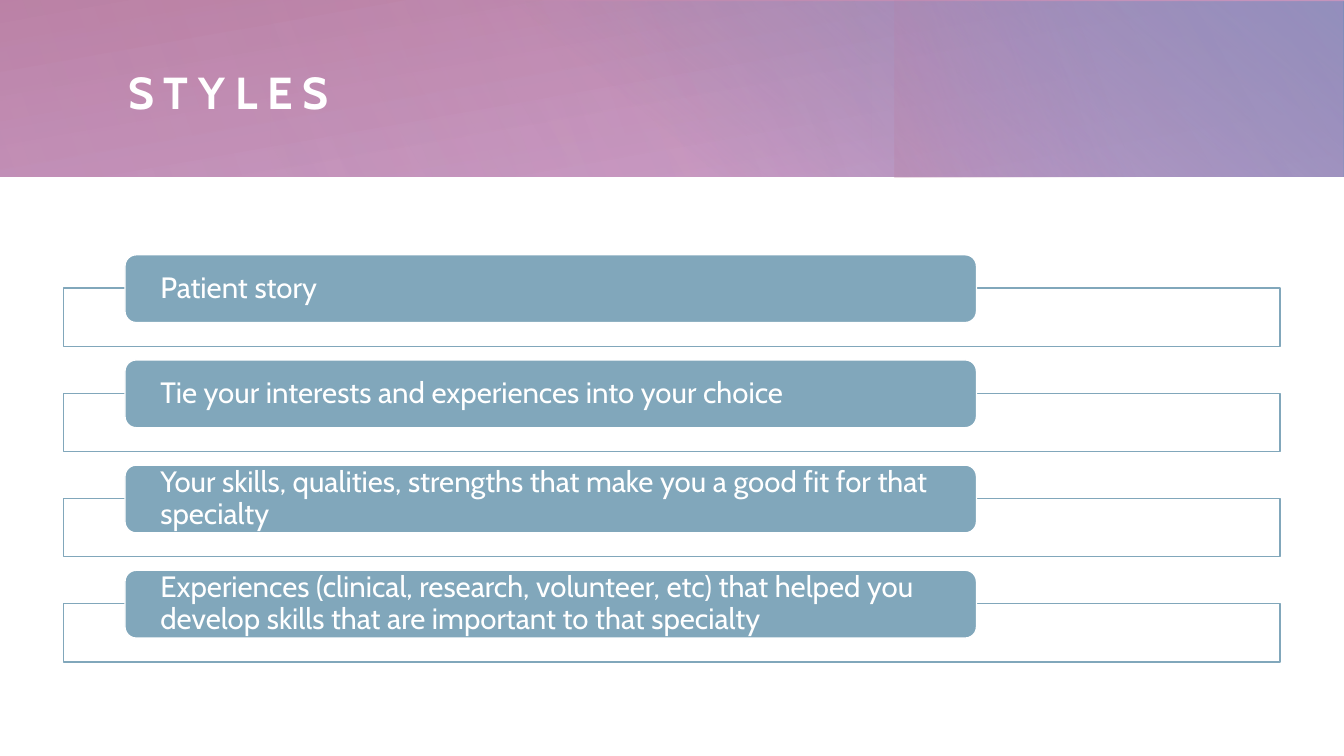
import pptx
import pptx.util
import pptx.dml.color
import pptx.enum.shapes
import pptx.enum.text
import pptx.oxml
import pptx.oxml.ns

Cm, Pt = pptx.util.Cm, pptx.util.Pt
RGB = pptx.dml.color.RGBColor.from_string
SHAPE = pptx.enum.shapes.MSO_SHAPE
MIDDLE = pptx.enum.text.MSO_ANCHOR.MIDDLE
LEFT = pptx.enum.text.PP_ALIGN.LEFT

TITLE = "STYLES"
STYLES = [
    "Patient story",
    "Tie your interests and experiences into your choice",
    "Your skills, qualities, strengths that make you a good fit for that specialty",
    "Experiences (clinical, research, volunteer, etc) that helped you develop "
    "skills that are important to that specialty",
]

THEME = {
    "white": "FFFFFF", "blue": "81A7BB", "pink": "C492C3", "rose": "BA7FA0",
    "violet": "A27FBA", "indigo": "7F8DBA",
    "title": {"name": "Cabin", "size": Pt(32), "bold": True},
    "body": {"name": "Cabin", "size": Pt(21), "bold": False},
    "line": Pt(1),
}

# Header layers: box in cm, rotation, gradient angle, stops (position %, colour, opacity %)
HEADER = [
    ((0, 0, 33.87, 4.45), 0, 260, [(0, "pink", 83), (100, "rose", 100)]),
    ((12.22, 0.03, 21.65, 4.42), 0, 310, [(22, "indigo", 0), (99, "indigo", 100)]),
    ((25.07, -2.51, 4.45, 9.5), 270, 250, [(45, "violet", 0), (99, "rose", 33)]),
    ((6.81, 0, 27.03, 4.45), 180, 330, [(0, "pink", 30), (99, "pink", 0)]),
    ((0, 0, 21.97, 4.45), 0, 340, [(0, "pink", 21), (99, "pink", 0)]),
]
TITLE_BOX = (3.23, 1.04, 28.83, 2.69)
FRAME_BOX = (1.6, 7.26, 30.66, 1.47)
LABEL_BOX = (3.15, 6.42, 21.46, 1.71)
ROW_PITCH = 2.65


def set_attrs(obj, values):
    for name, value in values.items():
        setattr(obj, name, value)


def add_box(slide, kind, box, fill=None, line=None):
    sp = slide.shapes.add_shape(kind, *map(Cm, box))
    sp.shadow.inherit = False
    if fill:
        sp.fill.solid()
        sp.fill.fore_color.rgb = RGB(THEME[fill])
    if line:
        sp.line.color.rgb = RGB(THEME[line])
        sp.line.width = THEME["line"]
    else:
        sp.line.fill.background()
    return sp


def set_gradient(sp, angle, stops):
    """Fill with a linear gradient whose stops may be transparent."""
    stops_xml = "".join(
        f'<a:gs pos="{pos * 1000}"><a:srgbClr val="{THEME[color]}">'
        f'<a:alpha val="{alpha * 1000}"/></a:srgbClr></a:gs>'
        for pos, color, alpha in stops)
    grad = pptx.oxml.parse_xml(
        f'<a:gradFill {pptx.oxml.ns.nsdecls("a")} rotWithShape="1">'
        f'<a:gsLst>{stops_xml}</a:gsLst>'
        f'<a:lin ang="{angle * 60000}" scaled="0"/></a:gradFill>')
    sp._element.spPr.find(pptx.oxml.ns.qn("a:prstGeom")).addnext(grad)


def write(sp, text, style, inset=0):
    """Put one left-aligned, vertically centred paragraph in a shape."""
    tf = sp.text_frame
    set_attrs(tf, {"word_wrap": True, "vertical_anchor": MIDDLE,
                   "auto_size": pptx.enum.text.MSO_AUTO_SIZE.NONE,
                   "margin_left": Cm(inset), "margin_right": Cm(inset),
                   "margin_top": 0, "margin_bottom": 0})
    p = tf.paragraphs[0]
    set_attrs(p, {"alignment": LEFT, "line_spacing": 0.9})
    r = p.add_run()
    r.text = text
    set_attrs(r.font, THEME[style])
    r.font.color.rgb = RGB(THEME["white"])
    return r


def add_header(slide):
    for box, rotation, angle, stops in HEADER:
        sp = add_box(slide, SHAPE.RECTANGLE, box)
        sp.rotation = rotation
        set_gradient(sp, angle, stops)
    title = slide.shapes.title
    set_attrs(title, dict(zip(("left", "top", "width", "height"), map(Cm, TITLE_BOX))))
    r = write(title, TITLE, "title")
    r._r.get_or_add_rPr().set("spc", "700")
    slide.shapes._spTree.append(title._element)  # bring in front of the header layers


def add_rows(slide):
    for i, text in enumerate(STYLES):
        frame, label = ((x, y + i * ROW_PITCH, w, h)
                        for x, y, w, h in (FRAME_BOX, LABEL_BOX))
        add_box(slide, SHAPE.RECTANGLE, frame, "white", "blue")
        sp = add_box(slide, SHAPE.ROUNDED_RECTANGLE, label, "blue", "white")
        write(sp, text, "body", inset=0.81)


def main():
    prs = pptx.Presentation()
    set_attrs(prs, {"slide_width": Cm(33.87), "slide_height": Cm(19.05)})
    slide = prs.slides.add_slide(prs.slide_layouts[5])
    add_header(slide)
    add_rows(slide)
    prs.save("out.pptx")


if __name__ == "__main__":
    main()
